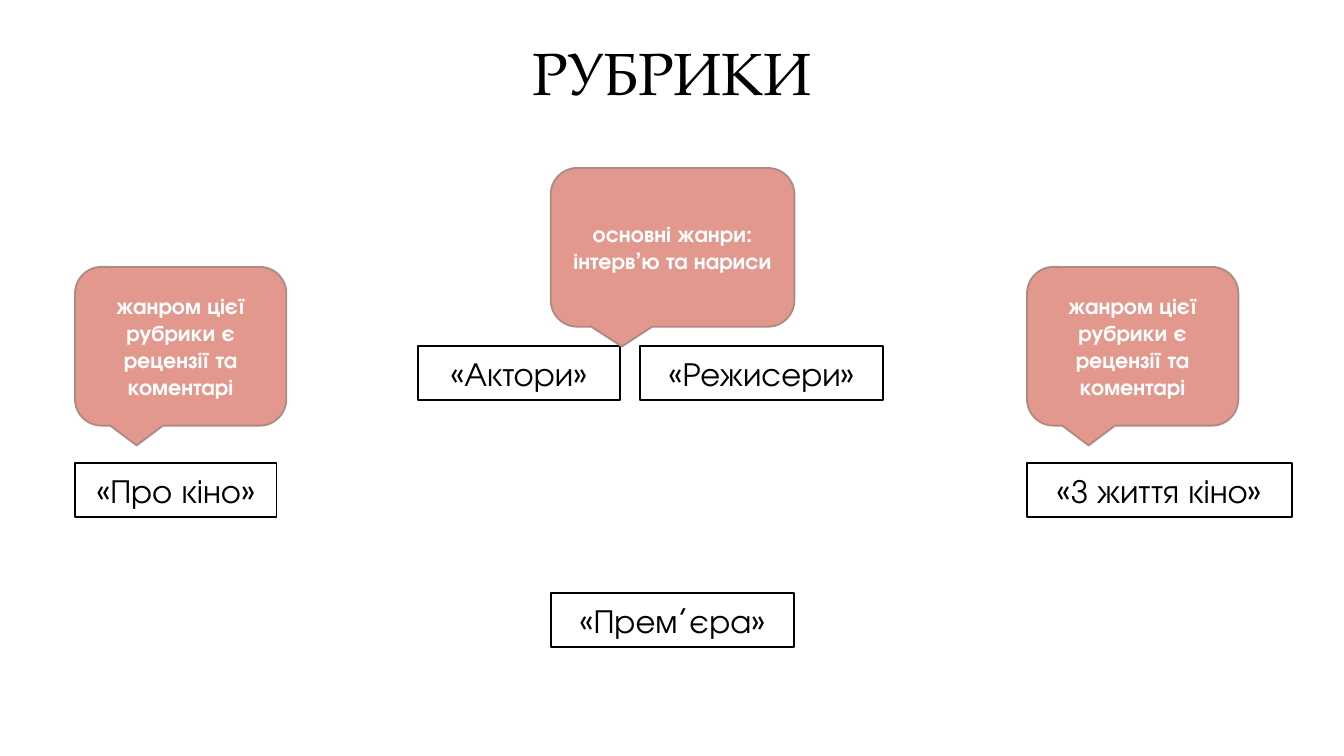
from pptx import Presentation
from pptx.util import Pt
from pptx.dml.color import RGBColor
from pptx.enum import shapes, text

SANS, SERIF = "TeX Gyre Adventor", "TeX Gyre Pagella"


def color(value):
    return RGBColor.from_string(value)


def put_text(tf, content, size=18, font=SANS, fill="000000", bold=False,
             anchor=text.MSO_ANCHOR.MIDDLE):
    tf.word_wrap = True
    tf.auto_size = text.MSO_AUTO_SIZE.NONE
    tf.vertical_anchor = anchor
    p = tf.paragraphs[0]
    p.alignment = text.PP_ALIGN.CENTER
    r = p.add_run()
    r.text = content
    f = r.font
    f.name, f.size, f.bold = font, Pt(size), bold
    f.color.rgb = color(fill)


class Deck:
    ink, paper = "000000", "FFFFFF"
    accent, edge = "E2988C", "AE8A84"
    label_height, callout_height = 28.8, 85

    def __init__(self, width, height):
        self.prs = Presentation()
        self.prs.slide_width, self.prs.slide_height = Pt(width), Pt(height)
        self.s = self.prs.slides.add_slide(self.prs.slide_layouts[5])
        bg = self.s.background.fill
        bg.solid()
        bg.fore_color.rgb = color(self.paper)

    def title(self, content, x, y, w, h):
        sp = self.s.shapes.title
        sp.left, sp.top, sp.width, sp.height = map(Pt, (x, y, w, h))
        tf = sp.text_frame
        tf.margin_left = tf.margin_right = tf.margin_top = tf.margin_bottom = 0
        put_text(tf, content, size=32, font=SERIF, fill=self.ink,
                 anchor=text.MSO_ANCHOR.TOP)

    def shape(self, kind, x, y, w, h, line):
        sp = self.s.shapes.add_shape(kind, *map(Pt, (x, y, w, h)))
        sp.shadow.inherit = False
        sp.line.color.rgb = color(line)
        sp.line.width = Pt(1)
        return sp

    def label(self, content, x, y, w):
        sp = self.shape(shapes.MSO_SHAPE.RECTANGLE, x, y, w,
                        self.label_height, self.ink)
        sp.fill.background()
        put_text(sp.text_frame, content, fill=self.ink)

    def callout(self, content, x, y, w):
        sp = self.shape(shapes.MSO_SHAPE.ROUNDED_RECTANGULAR_CALLOUT, x, y, w,
                        self.callout_height, self.edge)
        sp.fill.solid()
        sp.fill.fore_color.rgb = color(self.accent)
        put_text(sp.text_frame, content, size=12, fill=self.paper, bold=True)


def main():
    deck = Deck(720, 405)
    left, middle, right = 40.2, 295.1, 550.2

    # Title
    deck.title("РУБРИКИ", 266.4, 19.4, 187.2, 39)

    # Section names
    for name, x, y, w in [
        ("«Про кіно»", left, 248, 108),
        ("«Режисери»", 342.8, 185.6, 130.5),
        ("«Актори»", 224, 185.6, 108),
        ("«З життя кіно»", right, 248, 142),
        ("«Прем’єра»", middle, 317.8, 130.5),
    ]:
        deck.label(name, x, y, w)

    # Genre callouts
    reviews = "жанром цієї рубрики є рецензії та коментарі"
    for x in (left, right):
        deck.callout(reviews, x, 143, 113.2)
    deck.callout("основні жанри: інтерв’ю та нариси", middle, 90, 130.5)

    deck.prs.save("out.pptx")


if __name__ == "__main__":
    main()
